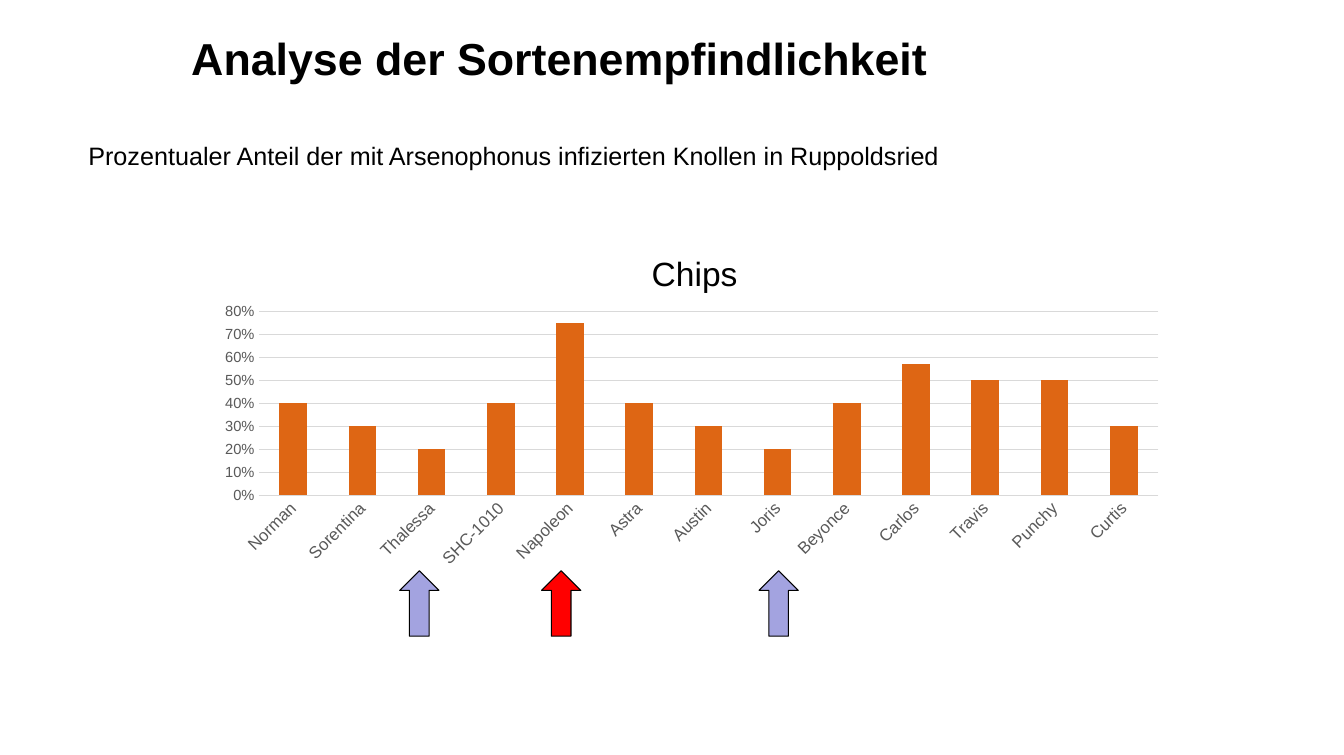
from dataclasses import dataclass

from pptx import Presentation
from pptx.chart.data import CategoryChartData
from pptx.dml.color import RGBColor
from pptx.enum.chart import XL_CHART_TYPE, XL_TICK_MARK
from pptx.enum.shapes import MSO_SHAPE
from pptx.oxml.ns import qn
from pptx.oxml.xmlchemy import OxmlElement
from pptx.util import Inches, Pt

STACKED_COLUMNS = XL_CHART_TYPE.COLUMN_STACKED
UP_ARROW = MSO_SHAPE.UP_ARROW
NO_TICK = XL_TICK_MARK.NONE

INFECTED_SHARE = {
    "Norman": 0.4, "Sorentina": 0.3, "Thalessa": 0.2, "SHC-1010": 0.4,
    "Napoleon": 0.75, "Astra": 0.4, "Austin": 0.3, "Joris": 0.2,
    "Beyonce": 0.4, "Carlos": 0.57, "Travis": 0.5, "Punchy": 0.5,
    "Curtis": 0.3,
}


@dataclass(frozen=True)
class Theme:
    """Colours, font and type sizes of the slide."""
    font: str = "Arial"
    ink: str = "000000"
    muted: str = "595959"
    grid: str = "D9D9D9"
    bar: str = "DE6614"
    tolerant: str = "A3A3E0"
    susceptible: str = "FF0000"
    heading: float = 32
    chart_heading: float = 24
    body: float = 18
    variety: float = 12
    percent: float = 10.5
    hairline: float = 0.75


def assign(target, values):
    """Set each named attribute of the target."""
    for name, value in values.items():
        setattr(target, name, value)


class SlideBuilder:
    """Draws styled elements placed in percent of the slide size."""

    def __init__(self, deck, theme):
        """Add a blank slide to the deck."""
        self.deck = deck
        self.theme = theme
        self.slide = deck.slides.add_slide(deck.slide_layouts[6])

    def box(self, left, top, width, height):
        """Turn percentages into slide lengths."""
        across, down = self.deck.slide_width / 100, self.deck.slide_height / 100
        return [round(share * side) for share, side in
                zip((left, top, width, height), (across, down, across, down))]

    def style(self, font, size, color, bold=False):
        """Give a font the theme's face with a size and colour."""
        assign(font, {"name": self.theme.font, "size": Pt(size), "bold": bold})
        font.color.rgb = RGBColor.from_string(color)

    def outline(self, line, color):
        """Draw a hairline in the given colour."""
        line.color.rgb = RGBColor.from_string(color)
        line.width = Pt(self.theme.hairline)

    def text(self, wording, place, size, frame_format, bold=False, spacing=None):
        """Add a text box with one paragraph."""
        frame = self.slide.shapes.add_textbox(*self.box(*place)).text_frame
        assign(frame, frame_format)
        paragraph = frame.paragraphs[0]
        paragraph.line_spacing = spacing
        run = paragraph.add_run()
        run.text = wording
        self.style(run.font, size, self.theme.ink, bold)

    def arrow(self, place, color):
        """Add an upward arrow marking a variety."""
        marker = self.slide.shapes.add_shape(UP_ARROW, *self.box(*place))
        marker.shadow.inherit = False
        marker.fill.solid()
        marker.fill.fore_color.rgb = RGBColor.from_string(color)
        self.outline(marker.line, self.theme.ink)

    def place_in_chart(self, element, position, shares):
        """Fix a chart part at shares of the chart's size."""
        layout = element.find(qn("c:layout"))
        if layout is None:
            layout = OxmlElement("c:layout")
            element.insert(position, layout)
        manual = OxmlElement("c:manualLayout")
        layout.append(manual)
        for tag, value in shares.items():
            entry = OxmlElement(f"c:{tag}")
            entry.set("val", str(value))
            manual.append(entry)

    def columns(self, heading, values, place):
        """Add a column chart of percentages by category."""
        theme = self.theme
        data = CategoryChartData(number_format="0%")
        data.categories = list(values)
        data.add_series("Series 1", list(values.values()))
        chart = self.slide.shapes.add_chart(
            STACKED_COLUMNS, *self.box(*place), data).chart
        assign(chart, {"has_legend": False, "has_title": True})
        self.style(chart.font, 10, theme.ink)

        title = chart.chart_title
        title.text_frame.text = heading
        self.style(title.text_frame.paragraphs[0].runs[0].font,
                   theme.chart_heading, theme.ink)
        edge = {"xMode": "edge", "yMode": "edge"}
        self.place_in_chart(title._element, 1, {**edge, "x": 0.455, "y": 0.06})
        self.place_in_chart(
            chart.element.find(".//" + qn("c:plotArea")), 0,
            {"layoutTarget": "inner", **edge,
             "x": 0.054, "y": 0.246, "w": 0.932, "h": 0.529})

        plot = chart.plots[0]
        assign(plot, {"gap_width": 150, "overlap": 100, "vary_by_categories": False})
        fill = plot.series[0].format.fill
        fill.solid()
        fill.fore_color.rgb = RGBColor.from_string(theme.bar)

        varieties, percents = chart.category_axis, chart.value_axis
        for axis, size in ((varieties, theme.variety), (percents, theme.percent)):
            assign(axis, {"major_tick_mark": NO_TICK, "minor_tick_mark": NO_TICK})
            self.style(axis.tick_labels.font, size, theme.muted)
        self.outline(varieties.format.line, theme.grid)
        varieties._element.find(qn("c:txPr")).find(qn("a:bodyPr")).set("rot", "-2700000")
        assign(percents, {"minimum_scale": 0, "maximum_scale": 0.8,
                          "major_unit": 0.1, "has_major_gridlines": True})
        assign(percents.tick_labels,
               {"number_format": "0%", "number_format_is_linked": False})
        percents.format.line.fill.background()
        self.outline(percents.major_gridlines.format.line, theme.grid)


def main():
    """Build and save the variety susceptibility slide."""
    deck = Presentation()
    assign(deck, {"slide_width": Inches(13.35), "slide_height": Inches(7.5)})
    theme = Theme()
    page = SlideBuilder(deck, theme)
    page.text("Prozentualer Anteil der mit Arsenophonus infizierten Knollen in Ruppoldsried",
              (5.84, 17.87, 65.4, 5.33), theme.body, {"word_wrap": False})
    page.columns("Chips", INFECTED_SHARE, (15.36, 29.87, 71.84, 46.13))
    for left, color in ((29.74, theme.tolerant), (40.3, theme.susceptible),
                        (56.48, theme.tolerant)):
        page.arrow((left, 75.6, 2.92, 8.67), color)
    page.text("Analyse der Sortenempfindlichkeit", (14.23, 4.93, 81.5, 14.4),
              theme.heading,
              {"word_wrap": True, "margin_left": 0, "margin_top": 0,
               "margin_right": 0, "margin_bottom": 0},
              bold=True, spacing=0.9)
    deck.save("out.pptx")


if __name__ == "__main__":
    main()
